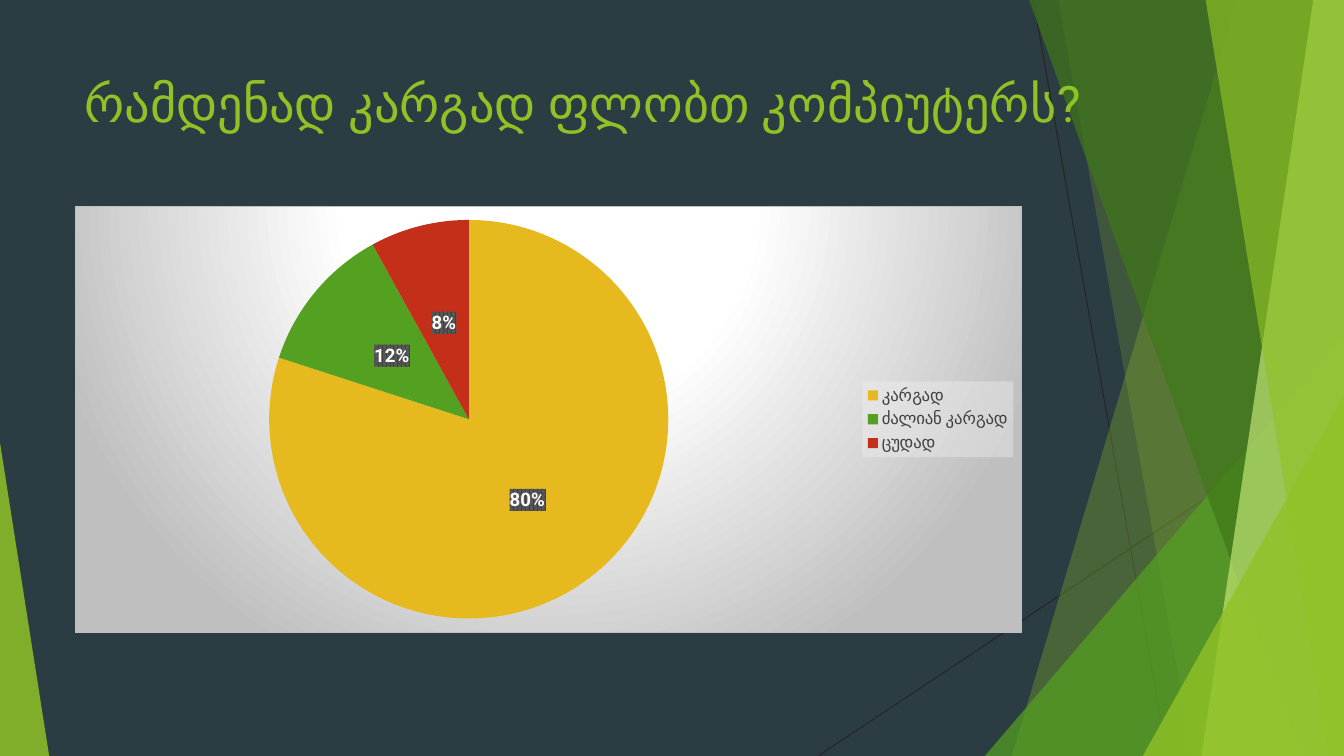
from lxml import etree
from pptx import Presentation
from pptx.chart.data import CategoryChartData
from pptx.dml.color import RGBColor
from pptx.enum.chart import XL_CHART_TYPE, XL_LABEL_POSITION, XL_LEGEND_POSITION
from pptx.enum.shapes import MSO_CONNECTOR, MSO_SHAPE
from pptx.oxml import parse_xml
from pptx.oxml.ns import nsdecls, qn
from pptx.util import Cm, Pt

WIDTH, HEIGHT = 33.87, 19.05
FONT = "Roboto"
GREEN, LEAF, FOREST, LIME = "90C226", "54A021", "3F7819", "C0E474"
DARK, WHITE, GREY = "404040", "FFFFFF", "BFBFBF"

CHART_FILL = f"""
<a:gradFill><a:gsLst>
  <a:gs pos="0"><a:srgbClr val="{WHITE}"/></a:gs>
  <a:gs pos="39000"><a:srgbClr val="{WHITE}"/></a:gs>
  <a:gs pos="100000"><a:srgbClr val="{GREY}"/></a:gs>
</a:gsLst><a:path path="circle">
  <a:fillToRect l="50000" t="-80000" r="50000" b="180000"/>
</a:path></a:gradFill>
<a:ln w="9525"><a:solidFill><a:srgbClr val="{GREY}"/></a:solidFill></a:ln>"""
LABEL_FILL = f"""
<a:pattFill prst="pct75"><a:fgClr><a:srgbClr val="{DARK}"/></a:fgClr>
<a:bgClr><a:srgbClr val="595959"/></a:bgClr></a:pattFill>"""
LEGEND_FILL = """
<a:solidFill><a:srgbClr val="F2F2F2"><a:alpha val="39000"/></a:srgbClr></a:solidFill>"""


def color(hex_string):
    return RGBColor.from_string(hex_string)


def chart_format(content):
    return parse_xml(f'<c:spPr {nsdecls("c", "a")}>{content}</c:spPr>')


class SlideBuilder:
    def __init__(self, slide, font):
        self.slide, self.font = slide, font
        self.shapes = slide.shapes

    def background(self, hex_string):
        fill = self.slide.background.fill
        fill.solid()
        fill.fore_color.rgb = color(hex_string)

    def style_font(self, font, size, hex_string, bold=False):
        font.name, font.size, font.bold = self.font, Pt(size), bold
        font.color.rgb = color(hex_string)

    def paint(self, shape, hex_string, opacity):
        shape.shadow.inherit = False
        shape.fill.solid()
        shape.fill.fore_color.rgb = color(hex_string)
        rgb = shape.fill._xPr.find(".//" + qn("a:srgbClr"))
        etree.SubElement(rgb, qn("a:alpha")).set("val", str(opacity * 1000))
        shape.line.fill.background()

    def line(self, x1, y1, x2, y2):
        line = self.shapes.add_connector(
            MSO_CONNECTOR.STRAIGHT, Cm(x1), Cm(y1), Cm(x2), Cm(y2))
        line.line.color.rgb = color("262626")
        line.line.width = Pt(0.75)
        etree.SubElement(line._element.spPr, qn("a:effectLst"))

    def band(self, top_x, bottom_x, hex_string, opacity):
        """Band from a slanted left edge to the right side of the slide."""
        top = Cm(-0.02)
        outline = self.shapes.build_freeform(Cm(top_x), top)
        outline.add_line_segments([
            (Cm(WIDTH), top), (Cm(WIDTH), Cm(HEIGHT)), (Cm(bottom_x), Cm(HEIGHT))])
        self.paint(outline.convert_to_shape(), hex_string, opacity)

    def triangle(self, left, width, height, apex, hex_string, opacity):
        """Triangle standing on the bottom edge of the slide."""
        shape = self.shapes.add_shape(
            MSO_SHAPE.ISOSCELES_TRIANGLE,
            Cm(left), Cm(HEIGHT - height), Cm(width), Cm(height))
        shape.adjustments[0] = apex
        self.paint(shape, hex_string, opacity)

    def title(self, text, left, top, width, height):
        frame = self.shapes.add_textbox(
            Cm(left), Cm(top), Cm(width), Cm(height)).text_frame
        frame.word_wrap = True
        frame.text = text
        self.style_font(frame.paragraphs[0].runs[0].font, 36, GREEN)

    def pie(self, answers, left, top, width, height):
        data = CategoryChartData()
        data.categories = [name for name, _, _ in answers]
        data.add_series("Series 1", [share for _, share, _ in answers])
        chart = self.shapes.add_chart(
            XL_CHART_TYPE.PIE, Cm(left), Cm(top), Cm(width), Cm(height), data).chart
        chart.has_title = False
        self.style_font(chart.font, 10, WHITE)
        chart._chartSpace.find(qn("c:chart")).addnext(chart_format(CHART_FILL))

        # Slices
        plot = chart.plots[0]
        plot.vary_by_categories = True
        for index, (_, _, hex_string) in enumerate(answers):
            fill = plot.series[0].points[index].format.fill
            fill.solid()
            fill.fore_color.rgb = color(hex_string)

        # Percent labels
        labels = plot.series[0].data_labels
        labels.show_value, labels.show_percentage = False, True
        labels.number_format, labels.number_format_is_linked = "0%", False
        labels.position = XL_LABEL_POSITION.CENTER
        self.style_font(labels.font, 13.3, WHITE, bold=True)
        labels._element.find(qn("c:txPr")).addprevious(chart_format(LABEL_FILL))

        # Legend
        chart.has_legend = True
        legend = chart.legend
        legend.position = XL_LEGEND_POSITION.RIGHT
        legend.include_in_layout = False
        self.style_font(legend.font, 12, DARK)
        legend._element.find(qn("c:txPr")).addprevious(chart_format(LEGEND_FILL))


def main():
    deck = Presentation()
    deck.slide_width, deck.slide_height = Cm(WIDTH), Cm(HEIGHT)
    page = SlideBuilder(deck.slides.add_slide(deck.slide_layouts[6]), FONT)
    page.background("2C3C43")

    # Facets on the right and in the lower left corner
    page.line(26.04, 0, 29.42, HEIGHT)
    page.line(WIDTH, 10.24, 20.62, HEIGHT)
    page.band(31.19, 25.5, GREEN, 30)
    page.band(26.67, 30.05, GREEN, 20)
    page.triangle(24.82, 9.05, 10.59, 1, LEAF, 72)
    page.band(25.93, 32.79, FOREST, 70)
    page.band(33.1, 30.28, LIME, 70)
    page.band(30.38, 33.48, GREEN, 65)
    page.triangle(28.8, 5.07, 9.07, 1, GREEN, 80)
    page.triangle(0, 1.24, 7.9, 0, GREEN, 85)

    # Question and answers
    page.title("რამდენად კარგად ფლობთ კომპიუტერს?", 1.88, 1.7, 25.78, 3.66)
    answers = [
        ("კარგად", 80, "E6B91E"),
        ("ძალიან კარგად", 12, LEAF),
        ("ცუდად", 8, "C42F1A"),
    ]
    page.pie(answers, 1.88, 5.18, 23.88, 10.77)

    deck.save("out.pptx")


if __name__ == "__main__":
    main()
